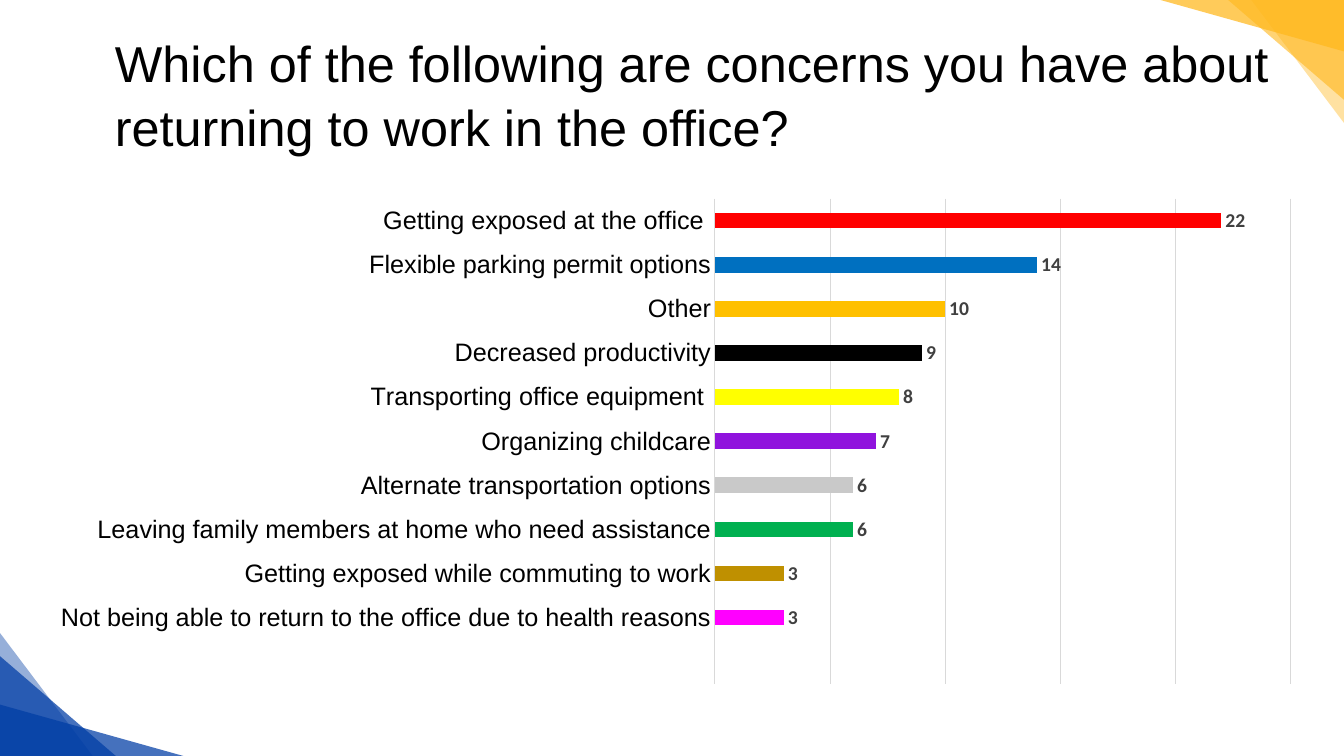
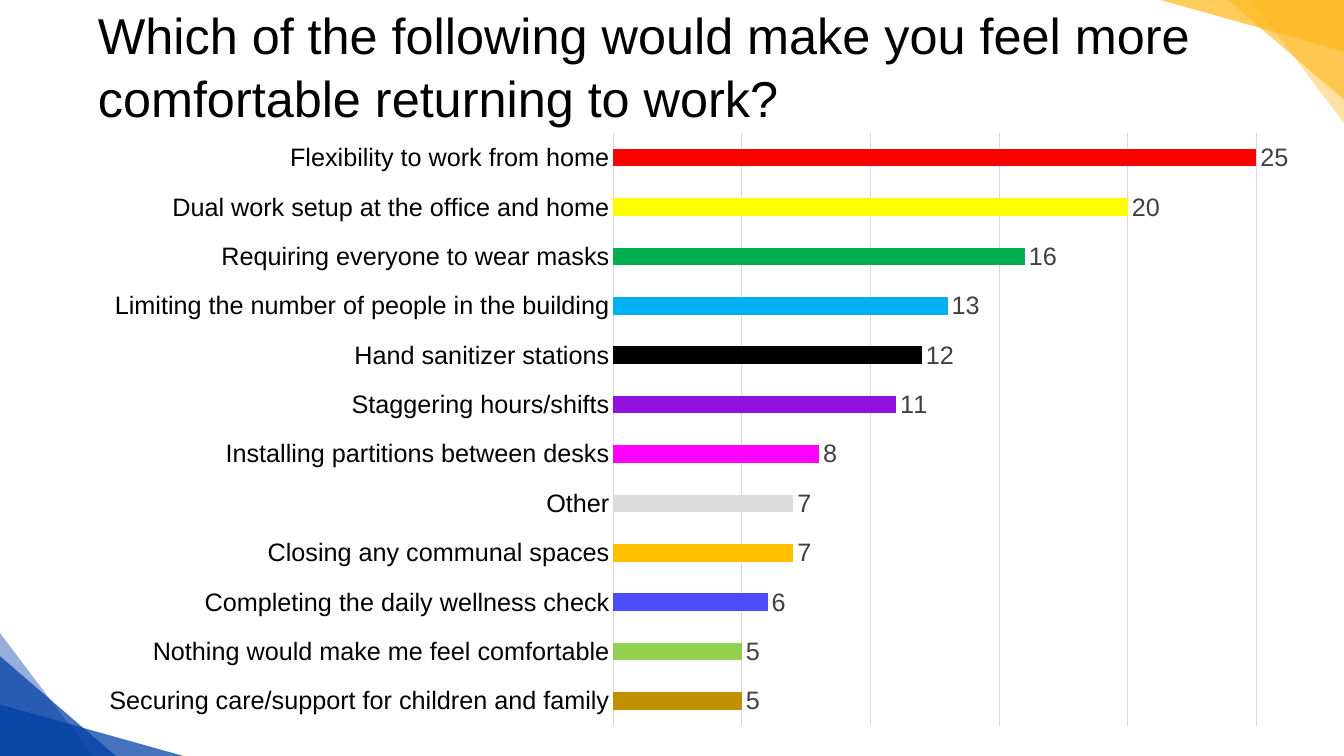
"""Build two survey slides with bar charts and shared corner triangles."""
from dataclasses import dataclass

from lxml import etree
from pptx import Presentation
from pptx import util as u
from pptx.chart import data as chart_data
from pptx.dml import color as dml
from pptx.enum import chart as chart_enum
from pptx.enum import shapes, text
from pptx.oxml import ns


@dataclass(frozen=True)
class Theme:
    """Colours, fonts and sizes that the slides share."""
    ink: str = "000000"
    label: str = "404040"
    grid: str = "D9D9D9"
    series: str = "4472C4"
    blue: str = "003DA5"
    gold: str = "FFB81D"
    font: str = "Arial"
    title_size: int = 36
    text_size: int = 18
    title_spacing: float = 1.05
    bar_gap: int = 182
    axis_max: int = 25
    axis_step: int = 5


THEME = Theme()
WIDTH, HEIGHT = u.Inches(13.333), u.Inches(7.5)
RED, YELLOW, GREEN, BLACK = "FF0000", "FFFF00", "00B050", "000000"
PURPLE, MAGENTA, AMBER, OCHRE = "9013DD", "FF00FF", "FFC000", "BF9000"

CONCERNS = [
    ("Getting exposed at the office ", 22, RED),
    ("Flexible parking permit options", 14, "0070C0"),
    ("Other", 10, AMBER),
    ("Decreased productivity", 9, BLACK),
    ("Transporting office equipment ", 8, YELLOW),
    ("Organizing childcare", 7, PURPLE),
    ("Alternate transportation options", 6, "C9C9C9"),
    ("Leaving family members at home who need assistance", 6, GREEN),
    ("Getting exposed while commuting to work", 3, OCHRE),
    ("Not being able to return to the office due to health reasons", 3, MAGENTA),
    ("", None, None),
]
COMFORTS = [
    ("Flexibility to work from home", 25, RED),
    ("Dual work setup at the office and home", 20, YELLOW),
    ("Requiring everyone to wear masks", 16, GREEN),
    ("Limiting the number of people in the building", 13, "00B0F0"),
    ("Hand sanitizer stations", 12, BLACK),
    ("Staggering hours/shifts", 11, PURPLE),
    ("Installing partitions between desks", 8, MAGENTA),
    ("Other", 7, "DBDBDB"),
    ("Closing any communal spaces", 7, AMBER),
    ("Completing the daily wellness check", 6, "4C4CFF"),
    ("Nothing would make me feel comfortable", 5, "92D050"),
    ("Securing care/support for children and family", 5, OCHRE),
]


def area(left, top, width, height):
    """Turn percentages of the slide into lengths."""
    return [int(share * full / 100) for share, full in
            zip((left, top, width, height), (WIDTH, HEIGHT, WIDTH, HEIGHT))]


def paint(fill, color, alpha=100):
    """Give a solid fill, with its opacity in percent."""
    fill.solid()
    fill.fore_color.rgb = dml.RGBColor.from_string(color)
    if alpha < 100:
        node = fill._xPr.find(".//" + ns.qn("a:srgbClr"))
        etree.SubElement(node, ns.qn("a:alpha")).set("val", str(alpha * 1000))


def style_font(font, size=THEME.text_size, color=THEME.ink, name=THEME.font, bold=False):
    """Set the format of a font."""
    font.size, font.name, font.bold = u.Pt(size), name, bold
    font.color.rgb = dml.RGBColor.from_string(color)


def write(frame, words, align=text.PP_ALIGN.LEFT, spacing=1.0, **font_format):
    """Write one paragraph into a text frame without insets."""
    frame.word_wrap = True
    frame.auto_size = text.MSO_AUTO_SIZE.NONE
    frame.vertical_anchor = text.MSO_ANCHOR.TOP
    frame.margin_left = frame.margin_top = frame.margin_right = frame.margin_bottom = 0
    para = frame.paragraphs[0]
    para.alignment, para.line_spacing = align, spacing
    span = para.add_run()
    span.text = words
    style_font(span.font, **font_format)


def add_title(page, words, place):
    """Place and fill the title placeholder."""
    title = page.shapes.title
    title.left, title.top, title.width, title.height = area(*place)
    write(title.text_frame, words, size=THEME.title_size, spacing=THEME.title_spacing)


def add_corners(page, layout):
    """Draw both corner ornaments and move them to the layout."""
    triangles = [(6.9, 16.27, 41, 41), (8.62, 13.2, 73, 61), (13.65, 6.8, 73, 73)]
    for index, (width, height, blue_alpha, gold_alpha) in enumerate(triangles):
        corners = [(0, 100 - height, 0, THEME.blue, blue_alpha),
                   (100 - width, 0, 180, THEME.gold, gold_alpha)]
        for side, (left, top, turn, color, alpha) in enumerate(corners):
            triangle = page.shapes.add_shape(
                shapes.MSO_SHAPE.RIGHT_TRIANGLE, *area(left, top, width, height))
            triangle.rotation = turn
            triangle.shadow.inherit = False
            triangle.line.fill.background()
            paint(triangle.fill, color, alpha)
            triangle._element.nvSpPr.cNvPr.set("id", str(100 + 2 * index + side))
            layout.shapes._spTree.append(triangle._element)


def fix_plot(chart, place, plot):
    """Pin the inner plot area, given in percent of the slide."""
    left, top, width, height = place
    shares = {"x": (plot[0] - left) / width, "y": (plot[1] - top) / height,
              "w": plot[2] / width, "h": plot[3] / height}
    plot_area = chart._chartSpace.find(".//" + ns.qn("c:plotArea"))
    layout = plot_area.find(ns.qn("c:layout"))
    if layout is None:
        layout = etree.Element(ns.qn("c:layout"))
        plot_area.insert(0, layout)
    manual = etree.SubElement(layout, ns.qn("c:manualLayout"))
    settings = {"layoutTarget": "inner", "xMode": "edge", "yMode": "edge", **shares}
    for tag, value in settings.items():
        etree.SubElement(manual, ns.qn("c:" + tag)).set("val", str(value))


def style_axes(chart):
    """Show category names and gridlines, and hide the value axis."""
    names, values = chart.category_axis, chart.value_axis
    names.major_tick_mark = names.minor_tick_mark = chart_enum.XL_TICK_MARK.NONE
    names.has_major_gridlines = False
    style_font(names.tick_labels.font)
    values.minimum_scale, values.maximum_scale = 0, THEME.axis_max
    values.major_unit = THEME.axis_step
    values.has_major_gridlines = True
    values.visible = False
    for line in (names.format.line, values.major_gridlines.format.line):
        paint(line.fill, THEME.grid)
        line.width = u.Pt(0.75)


def add_bars(page, bars, place, plot, **label_format):
    """Add a bar chart whose bars are listed from top to bottom."""
    bars = bars[::-1]
    data = chart_data.CategoryChartData()
    data.categories = [name for name, _, _ in bars]
    data.add_series("Series 1", [value for _, value, _ in bars])
    chart = page.shapes.add_chart(
        chart_enum.XL_CHART_TYPE.BAR_CLUSTERED, *area(*place), data).chart
    chart.has_legend = chart.has_title = False
    style_font(chart.font)
    style_axes(chart)
    fix_plot(chart, place, plot)
    group = chart.plots[0]
    group.gap_width, group.vary_by_categories = THEME.bar_gap, False
    series = group.series[0]
    series.invert_if_negative = False
    paint(series.format.fill, THEME.series)
    for index, (_, _, color) in enumerate(bars):
        if color:
            paint(series.points[index].format.fill, color)
    labels = series.data_labels
    labels.show_value = True
    labels.position = chart_enum.XL_LABEL_POSITION.OUTSIDE_END
    style_font(labels.font, color=THEME.label, **label_format)


def main():
    """Build and save the deck."""
    deck = Presentation()
    deck.slide_width, deck.slide_height = WIDTH, HEIGHT
    layout = deck.slide_layouts[5]

    page = deck.slides.add_slide(layout)
    add_corners(page, layout)
    add_title(page, "Which of the following are concerns you have about "
              "returning to work in the office?", (8.55, 3.87, 89.1, 16.13))
    add_bars(page, CONCERNS, (-8.1, 12, 108.68, 87.07), (53.2, 26.28, 42.82, 64.17),
             size=14, name="Calibri", bold=True)

    page = deck.slides.add_slide(layout)
    add_title(page, "Which of the following would make you feel more "
              "comfortable returning to work?", (7.28, 0.13, 89.48, 16.13))
    add_bars(page, COMFORTS, (6.15, 16, 98.93, 81.73), (45.64, 17.6, 47.85, 78.4))

    deck.save("out.pptx")


if __name__ == "__main__":
    main()
